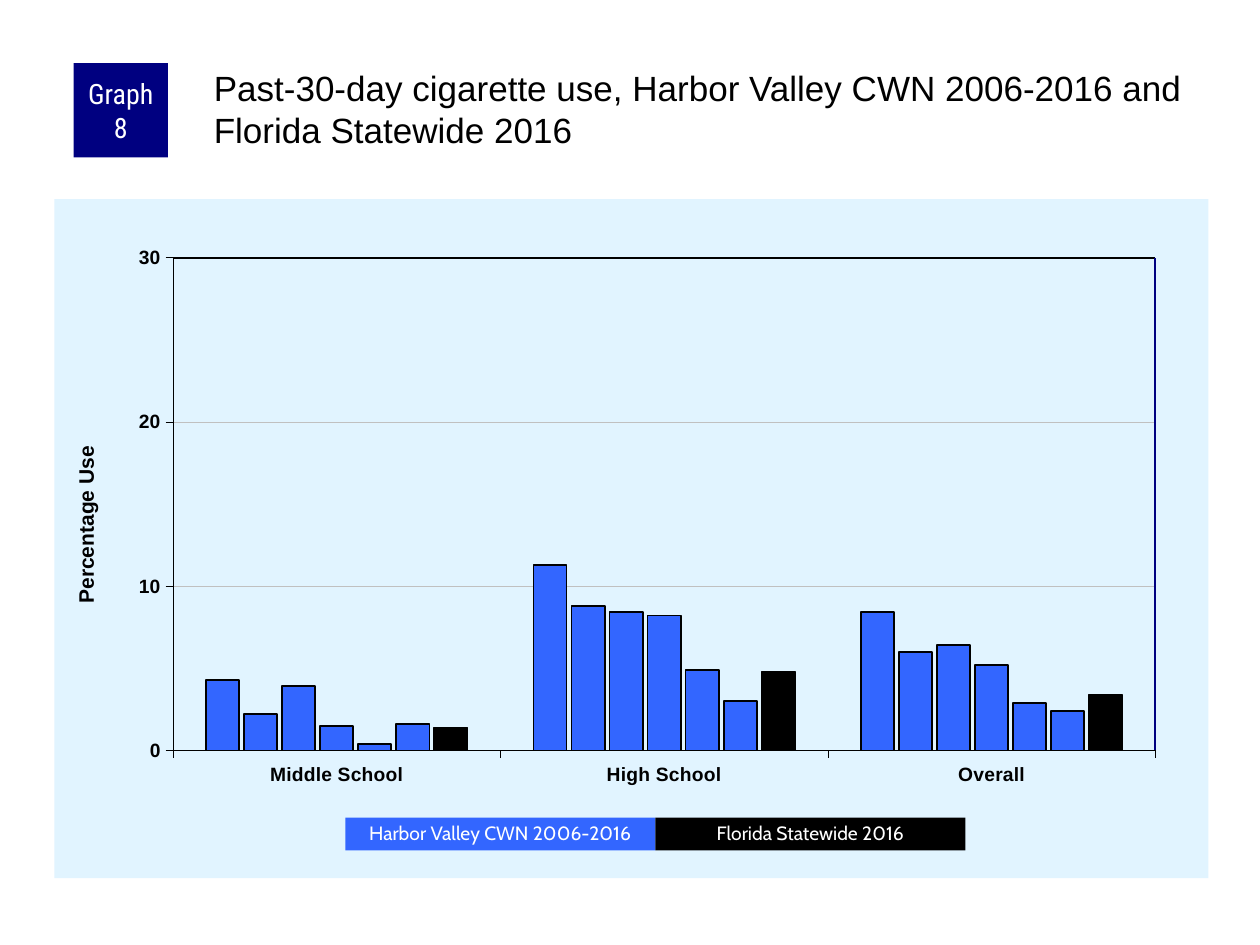
from dataclasses import dataclass

from lxml.etree import SubElement
from pptx import Presentation
from pptx.chart.data import CategoryChartData
from pptx.dml.color import RGBColor
from pptx.enum.chart import XL_CHART_TYPE as ChartType, XL_TICK_MARK as TickMark
from pptx.enum.shapes import MSO_CONNECTOR as Connector, MSO_SHAPE as Shape
from pptx.enum.text import MSO_ANCHOR as Anchor, PP_ALIGN as Align
from pptx.oxml import parse_xml
from pptx.oxml.ns import nsdecls, qn
from pptx.util import Pt

COLORS = {
    "navy": "000080",
    "blue": "3366FF",
    "black": "000000",
    "white": "FFFFFF",
    "panel": "E1F4FF",
    "grid": "C0C0C0",
}


@dataclass
class Label:
    text: str
    left: float
    top: float
    width: float
    height: float
    fill: str
    font: str
    size: float
    side_inset: float = 7.2
    line_spacing: float = 1.0


@dataclass
class Edge:
    x1: float
    y1: float
    x2: float
    y2: float
    color: str
    width: float


@dataclass
class Region:
    """Place inside the chart, as fractions of its size."""
    x: float
    y: float
    width: float = 0
    height: float = 0


# One row per bar in a group: middle school, high school, overall
SCHOOL_LEVELS = ["Middle School", "High School", "Overall"]
REGION_USE = [
    (4.3, 11.3, 8.4),
    (2.2, 8.8, 6),
    (3.9, 8.4, 6.4),
    (1.5, 8.2, 5.2),
    (0.4, 4.9, 2.9),
    (1.6, 3, 2.4),
]
STATEWIDE_USE = (1.4, 4.8, 3.4)

REGION_NAME = "Harbor Valley CWN 2006-2016"
STATE_NAME = "Florida Statewide 2016"

KEY_LEFT, KEY_WIDTH = 197.3, 177.2
GRAPH_NUMBER = Label("Graph 8", 42, 36, 54, 54, "navy", "Roboto Condensed", 16, 3.6)
KEY = [
    Label(text, KEY_LEFT + i * KEY_WIDTH, 467.3, KEY_WIDTH, 18.7, fill, "Cabin", 11,
          line_spacing=0.9)
    for i, (text, fill) in enumerate([(REGION_NAME, "blue"), (STATE_NAME, "black")])
]

PLOT_LEFT, PLOT_TOP, PLOT_RIGHT, PLOT_BOTTOM = 98.9, 147.4, 660, 428.6
PLOT_EDGES = [
    Edge(PLOT_LEFT, PLOT_TOP, PLOT_RIGHT, PLOT_TOP, "black", 0.75),
    Edge(PLOT_RIGHT, PLOT_TOP, PLOT_RIGHT, PLOT_BOTTOM, "navy", 1),
]


def rgb(name: str) -> RGBColor:
    return RGBColor.from_string(COLORS[name])


def style_font(font, face: str, size: float, color: str, bold: bool = False) -> None:
    font.name, font.size, font.bold = face, Pt(size), bold
    font.color.rgb = rgb(color)


def style_line(line, color: str, width: float) -> None:
    line.color.rgb = rgb(color)
    line.width = Pt(width)


def draw_label(slide, label: Label) -> None:
    box = slide.shapes.add_shape(Shape.RECTANGLE, Pt(label.left), Pt(label.top),
                                 Pt(label.width), Pt(label.height))
    box.shadow.inherit = False
    box.fill.solid()
    box.fill.fore_color.rgb = rgb(label.fill)
    box.line.fill.background()
    frame = box.text_frame
    frame.word_wrap = True
    frame.vertical_anchor = Anchor.MIDDLE
    frame.margin_left = frame.margin_right = Pt(label.side_inset)
    frame.margin_top = frame.margin_bottom = 0
    wording = frame.paragraphs[0]
    wording.text = label.text
    wording.alignment = Align.CENTER
    wording.line_spacing = label.line_spacing
    style_font(wording.font, label.font, label.size, "white")


def place(part, index: int, region: Region) -> None:
    """Give a chart part a manual layout as its child number index."""
    for old in part.findall(qn("c:layout")):
        part.remove(old)
    layout = parse_xml(f"<c:layout {nsdecls('c')}><c:manualLayout/></c:layout>")
    settings = {"xMode": "edge", "yMode": "edge", "x": region.x, "y": region.y}
    if region.width:
        settings = {"layoutTarget": "inner", **settings,
                    "w": region.width, "h": region.height}
    for tag, value in settings.items():
        SubElement(layout[0], qn(f"c:{tag}")).set("val", str(value))
    part.insert(index, layout)


def area_format(fill: str):
    return parse_xml(f"<c:spPr {nsdecls('c', 'a')}>{fill}<a:ln><a:noFill/></a:ln></c:spPr>")


def draw_chart(slide) -> None:
    use = CategoryChartData()
    use.categories = SCHOOL_LEVELS
    for number, values in enumerate([*REGION_USE, STATEWIDE_USE], 1):
        use.add_series(f"Series {number}", values)
    chart = slide.shapes.add_chart(ChartType.COLUMN_CLUSTERED, Pt(31), Pt(113.8),
                                   Pt(659.5), Pt(388), use).chart
    chart.has_legend = chart.has_title = False
    style_font(chart.font, "Arial", 8, "black")

    # Bars
    bars = chart.plots[0]
    bars.gap_width, bars.overlap = 200, -15
    bars.vary_by_categories = False
    for number, series in enumerate(bars.series):
        series.format.fill.solid()
        series.format.fill.fore_color.rgb = rgb("blue" if number < len(REGION_USE) else "black")
        style_line(series.format.line, "black", 1)

    # Axes
    for axis in (chart.category_axis, chart.value_axis):
        style_font(axis.tick_labels.font, "Arial", 11, "black", True)
        style_line(axis.format.line, "black", 0.25)
        axis.major_tick_mark, axis.minor_tick_mark = TickMark.OUTSIDE, TickMark.NONE
    percent = chart.value_axis
    percent.minimum_scale, percent.maximum_scale, percent.major_unit = 0, 30, 10
    percent.has_major_gridlines = True
    style_line(percent.major_gridlines.format.line, "grid", 0.25)
    heading = percent.axis_title
    caption = heading.text_frame.paragraphs[0]
    caption.text = "Percentage Use"
    style_font(caption.font, "Arial", 12, "black", True)
    heading.element.find(".//" + qn("a:bodyPr")).set("rot", "-5400000")
    place(heading.element, 1, Region(0.013, 0.358))

    # Panel and plot area
    body = chart.element.find(qn("c:chart"))
    panel_fill = f"<a:solidFill><a:srgbClr val='{COLORS['panel']}'/></a:solidFill>"
    body.addnext(area_format(panel_fill))
    plot_area = body.find(qn("c:plotArea"))
    place(plot_area, 0, Region(0.103, 0.086, 0.851, 0.726))
    plot_area.append(area_format("<a:noFill/>"))


def draw_edge(slide, edge: Edge) -> None:
    border = slide.shapes.add_connector(Connector.STRAIGHT, Pt(edge.x1), Pt(edge.y1),
                                        Pt(edge.x2), Pt(edge.y2))
    style_line(border.line, edge.color, edge.width)
    SubElement(border.element.spPr, qn("a:effectLst"))


def draw_title(slide) -> None:
    frame = slide.shapes.add_textbox(Pt(120), Pt(36), Pt(570), Pt(60)).text_frame
    frame.word_wrap = True
    frame.margin_left = frame.margin_top = Pt(2.2)
    frame.margin_right = frame.margin_bottom = 0
    title = frame.paragraphs[0]
    title.text = f"Past-30-day cigarette use, {REGION_NAME} and {STATE_NAME}"
    style_font(title.font, "Arial", 20, "black")


def main() -> None:
    deck = Presentation()
    deck.slide_width, deck.slide_height = Pt(720), Pt(540)
    slide = deck.slides.add_slide(deck.slide_layouts[6])
    draw_chart(slide)
    for edge in PLOT_EDGES:
        draw_edge(slide, edge)
    draw_title(slide)
    for label in [GRAPH_NUMBER, *KEY]:
        draw_label(slide, label)
    deck.save("out.pptx")


if __name__ == "__main__":
    main()
